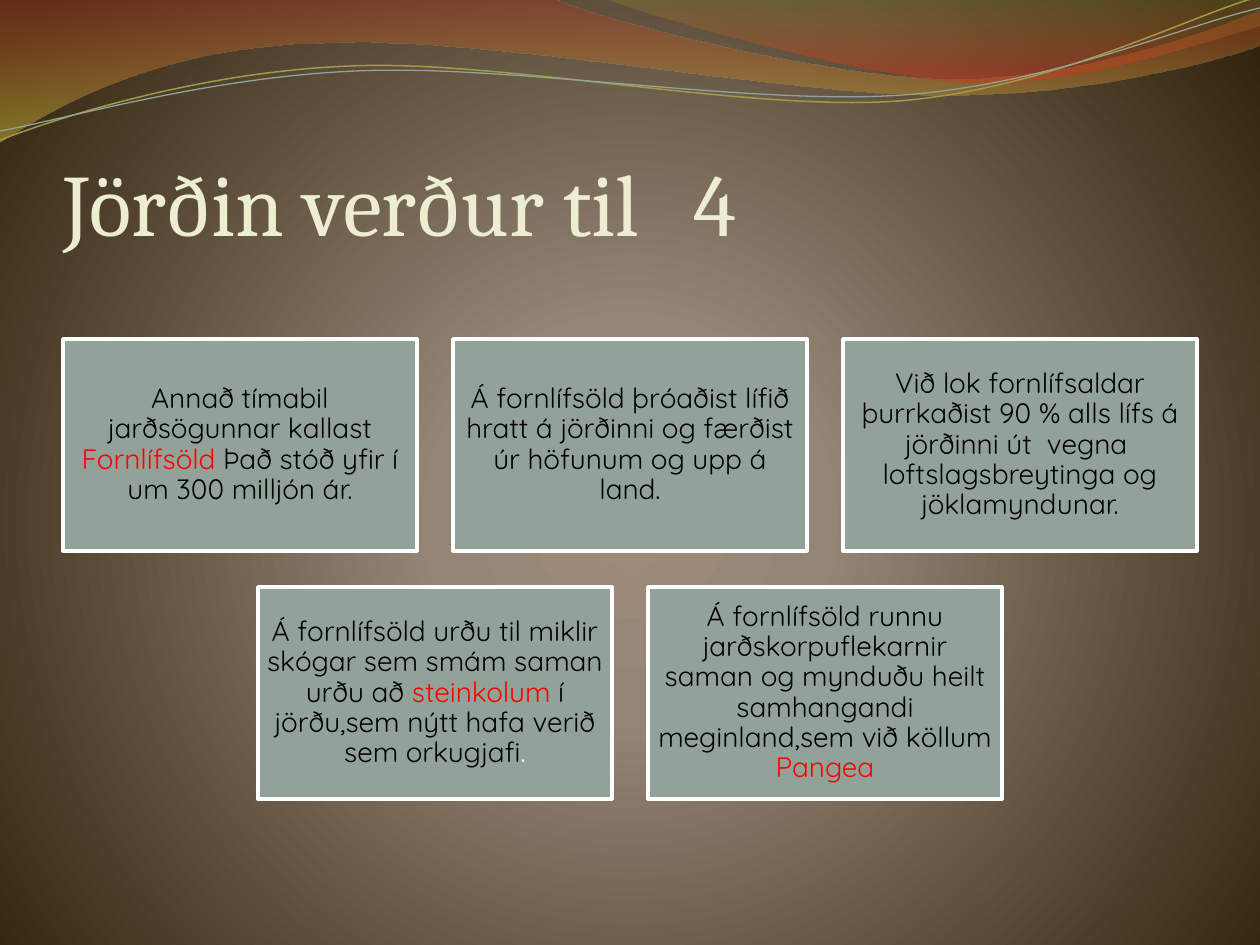
from lxml.etree import SubElement
from pptx import Presentation
from pptx.dml.color import RGBColor
from pptx.enum.shapes import MSO_SHAPE
from pptx.enum.text import MSO_ANCHOR, MSO_AUTO_SIZE, PP_ALIGN
from pptx.oxml.ns import qn
from pptx.util import Pt

WIDTH, HEIGHT = 1260, 945
BOX_WIDTH, BOX_HEIGHT, GAP = 354, 212, 36
FIRST_ROW, ROW_PITCH = 339, 248
BLACK, RED, WHITE, SAGE = "000000", "FF0000", "FFFFFF", "93A299"

BANDS = [
    ([(0, 0), (554, -1), (600, 21, 837, 79, 955, 79), (1075, 79, 1207, 33, 1260, 11),
      (1261, 45), (1239, 55, 1096, 96, 940, 95), (784, 95, 481, 35, 324, 43),
      (163, 45, 58, 105, -1, 142), (0, 0)],
     [(0, "A43724", 45), (100, "BDB333", 55)]),
    ([(604, -1), (641, 14, 859, 78, 969, 82), (1079, 87, 1211, 40, 1260, 26),
      (1260, 0), (604, -1)],
     [(0, "918A33", 30), (80, "D0381E", 45)]),
]
STRANDS = [
    ([(0, 140), (60, 117, 199, 72, 349, 66), (498, 59, 747, 112, 898, 101),
      (1050, 89, 1182, 19, 1257, -3)], "A09A49", 0.85),
    ([(0, 131), (59, 121, 207, 77, 357, 71), (508, 64, 752, 106, 903, 95),
      (1053, 84, 1181, 26, 1260, 8)], SAGE, 0.75),
]
FACT_ROWS = [
    [
        [("Annað tímabil jarðsögunnar kallast ", BLACK), ("Fornlífsöld ", RED),
         ("Það stóð yfir í um 300 milljón ár.", BLACK)],
        [("Á fornlífsöld þróaðist lífið hratt á jörðinni og færðist úr höfunum "
          "og upp á land.", BLACK)],
        [("Við lok fornlífsaldar þurrkaðist 90 % alls lífs á jörðinni út  vegna  "
          "loftslagsbreytinga og jöklamyndunar.", BLACK)],
    ],
    [
        [("Á fornlífsöld urðu til miklir skógar sem smám saman urðu að ", BLACK),
         ("steinkolum", RED),
         (" í jörðu,sem nýtt hafa verið sem orkugjafi", BLACK), (".", WHITE)],
        [("Á fornlífsöld runnu jarðskorpuflekarnir saman og mynduðu heilt samhangandi "
          "meginland,sem við köllum ", BLACK), ("Pangea", RED)],
    ],
]


def px(length):
    return round(length * 914400 / 126)


def color(hex_string):
    return RGBColor.from_string(hex_string)


def set_gradient(fill, parent, stops, focus=None):
    fill.gradient()
    gradient = parent.find(".//" + qn("a:gradFill"))
    for child in list(gradient):
        gradient.remove(child)
    stop_list = SubElement(gradient, qn("a:gsLst"))
    for position, hex_string, opacity in stops:
        stop = SubElement(stop_list, qn("a:gs"), pos=str(position * 1000))
        tint = SubElement(stop, qn("a:srgbClr"), val=hex_string)
        if opacity < 100:
            SubElement(tint, qn("a:alpha"), val=str(opacity * 1000))
    if focus:
        circle = SubElement(gradient, qn("a:path"), path="circle")
        edges = {side: str(value * 1000) for side, value in zip("ltrb", focus)}
        SubElement(circle, qn("a:fillToRect"), **edges)
    else:
        SubElement(gradient, qn("a:lin"), ang="5400000", scaled="0")


def bend(curve, segments):
    lines = iter(curve.element.findall(".//" + qn("a:lnTo")))
    for segment in segments:
        first, *others = [next(lines) for _ in range(len(segment) // 2)]
        if others:
            first.tag = qn("a:cubicBezTo")
            for line in others:
                first.append(line[0])
                line.getparent().remove(line)


class SlideBuilder:
    """Holds the style and the current slide and draws each kind of element."""

    title_font, body_font = "Cambria", "Quicksand"

    def __init__(self, slide):
        self.slide = slide

    def background(self, stops, focus):
        set_gradient(self.slide.background.fill, self.slide.element, stops, focus)

    def curve(self, outline, closed):
        start, *segments = outline
        points = [(px(x), px(y)) for segment in segments
                  for x, y in zip(segment[::2], segment[1::2])]
        builder = self.slide.shapes.build_freeform(*map(px, start), scale=1.0)
        builder.add_line_segments(points, close=closed)
        curve = builder.convert_to_shape()
        bend(curve, segments)
        curve.shadow.inherit = False
        return curve

    def band(self, outline, stops):
        band = self.curve(outline, True)
        band.line.fill.background()
        set_gradient(band.fill, band.element, stops)

    def strand(self, outline, hex_string, weight):
        strand = self.curve(outline, False)
        strand.fill.background()
        strand.line.color.rgb = color(hex_string)
        strand.line.width = Pt(weight)

    def title(self, text, x, y, width, height):
        title = self.slide.shapes.title
        title.left, title.top, title.width, title.height = map(px, (x, y, width, height))
        frame = title.text_frame
        frame.text = text
        frame.auto_size = MSO_AUTO_SIZE.NONE
        frame.vertical_anchor = MSO_ANCHOR.BOTTOM
        frame.margin_left = frame.margin_right = frame.margin_bottom = 0
        paragraph = frame.paragraphs[0]
        paragraph.alignment = PP_ALIGN.LEFT
        paragraph.font.name, paragraph.font.size = self.title_font, Pt(50)
        paragraph.font.color.rgb = color("ECEDD1")

    def fact(self, passages, x, y):
        box = self.slide.shapes.add_shape(
            MSO_SHAPE.RECTANGLE, px(x), px(y), px(BOX_WIDTH), px(BOX_HEIGHT))
        box.shadow.inherit = False
        box.fill.solid()
        box.fill.fore_color.rgb = color(SAGE)
        box.line.color.rgb = color(WHITE)
        box.line.width = Pt(2)
        frame = box.text_frame
        frame.word_wrap = True
        frame.vertical_anchor = MSO_ANCHOR.MIDDLE
        frame.margin_left = frame.margin_right = px(9)
        frame.margin_top = frame.margin_bottom = px(9)
        paragraph = frame.paragraphs[0]
        paragraph.alignment = PP_ALIGN.CENTER
        paragraph.line_spacing = 0.9
        paragraph.font.name, paragraph.font.size = self.body_font, Pt(16)
        for text, hex_string in passages:
            run = paragraph.add_run()
            run.text = text
            run.font.color.rgb = color(hex_string)


def main():
    deck = Presentation()
    deck.slide_width, deck.slide_height = px(WIDTH), px(HEIGHT)
    builder = SlideBuilder(deck.slides.add_slide(deck.slide_layouts[5]))
    builder.background([(0, "9D8C79", 100), (25, "948574", 100), (100, "32230E", 100)],
                       (10, 110, 10, 100))
    for band in BANDS:
        builder.band(*band)
    for strand in STRANDS:
        builder.strand(*strand)
    builder.title("Jörðin verður til \t4", 63, 96, 1134, 158)
    for row, facts in enumerate(FACT_ROWS):
        row_width = len(facts) * (BOX_WIDTH + GAP) - GAP
        left = (WIDTH - row_width) // 2
        for column, passages in enumerate(facts):
            builder.fact(passages, left + column * (BOX_WIDTH + GAP),
                         FIRST_ROW + row * ROW_PITCH)
    deck.save("out.pptx")


if __name__ == "__main__":
    main()
